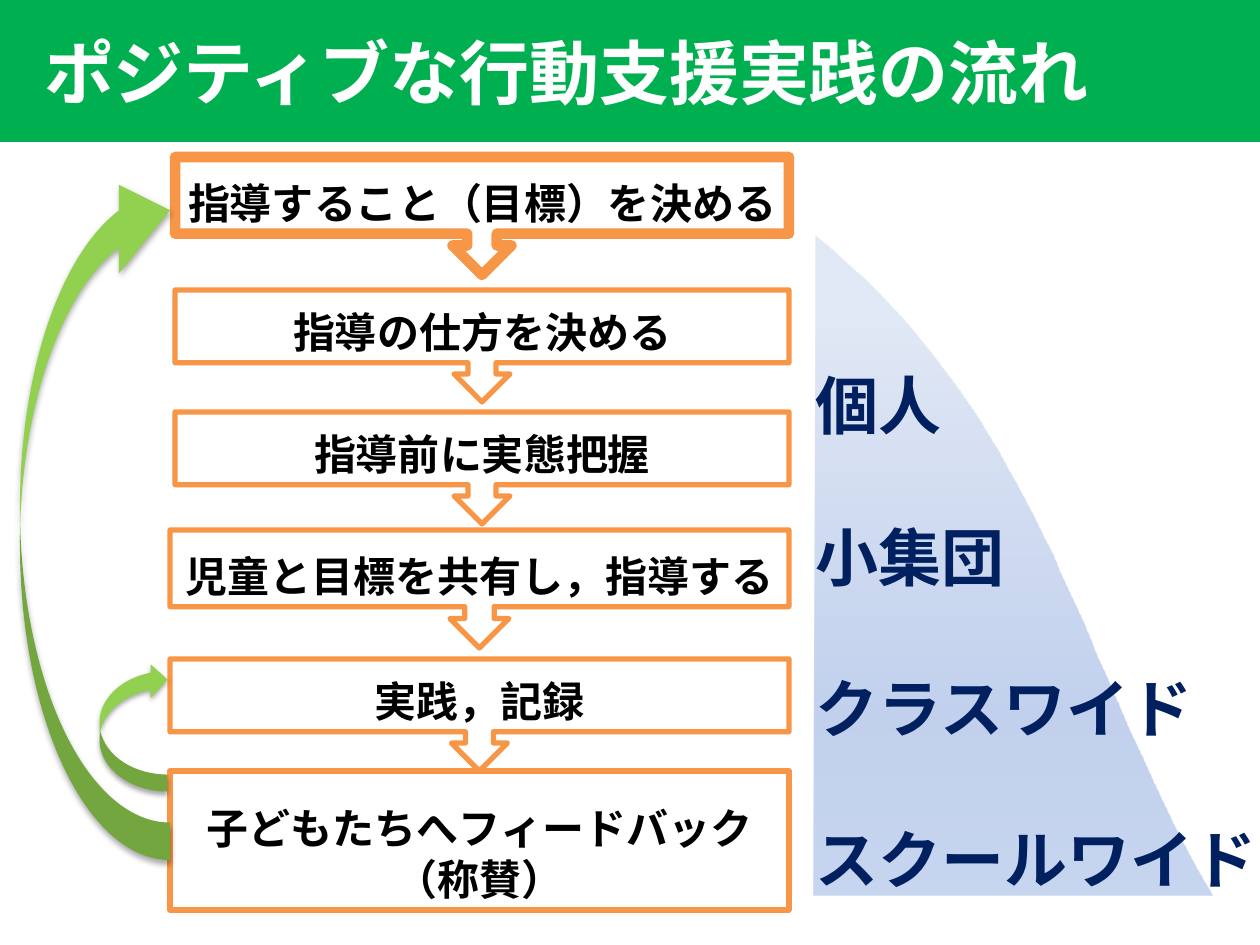
from lxml import etree
from pptx import Presentation
from pptx import util as u
from pptx.dml.color import RGBColor
from pptx.enum import shapes, text
from pptx.oxml import parse_xml
from pptx.oxml.ns import nsdecls, qn

PX = 914400 / 126
FONT = "Noto Sans CJK JP"
HEX = {
    "green": "00B050", "lime": "92D050", "orange": "F79646", "navy": "002060",
    "white": "FFFFFF", "black": "000000",
    "deep": "B2C6EA", "mid": "C2D1ED", "pale": "E1E8F5",
}
CALL = shapes.MSO_SHAPE.DOWN_ARROW_CALLOUT
RECT = shapes.MSO_SHAPE.RECTANGLE
CURVE = shapes.MSO_SHAPE.CURVED_DOWN_ARROW
# preset, left, top, width, height, line width, lines of text
STEPS = [
    (CALL, 175, 157, 614, 118, 6, ["指導すること（目標）を決める"]),
    (CALL, 175, 290, 614, 112, 3, ["指導の仕方を決める"]),
    (CALL, 175, 412, 614, 112, 3, ["指導前に実態把握"]),
    (CALL, 170, 530, 619, 118, 3, ["児童と目標を共有し，指導する"]),
    (CALL, 170, 659, 619, 112, 3, ["実践，記録"]),
    (RECT, 170, 771, 619, 139, 3, ["子どもたちへフィードバック", "（称賛）"]),
]
LEVELS = ["個人", "小集団", "クラスワイド", "スクールワイド"]


def px(n):
    return u.Emu(round(n * PX))


def rgb(name):
    return RGBColor.from_string(HEX[name])


def place(shape, *box):
    shape.left, shape.top, shape.width, shape.height = map(px, box)


def paint(shape, name):
    shape.fill.solid()
    shape.fill.fore_color.rgb = rgb(name)


def write(shape, lines, size, color, align=text.PP_ALIGN.LEFT,
          anchor=text.MSO_ANCHOR.TOP, left=0, space=1):
    frame = shape.text_frame
    frame.word_wrap = True
    frame.auto_size = text.MSO_AUTO_SIZE.NONE
    frame.vertical_anchor = anchor
    frame.margin_left, frame.margin_right = px(left), 0
    for i, line in enumerate(lines):
        para = frame.add_paragraph() if i else frame.paragraphs[0]
        para.alignment, para.line_spacing = align, space
        para.space_before = u.Pt(0)
        run = para.add_run()
        run.text = line
        font = run.font
        font.name, font.size, font.bold = FONT, u.Pt(size), True
        font.color.rgb = rgb(color)
        etree.SubElement(font._element, qn("a:ea"), typeface=FONT)


def add_step(slide, kind, left, top, width, height, line, lines):
    box = slide.shapes.add_shape(kind, *map(px, (left, top, width, height)))
    box.shadow.inherit = False
    paint(box, "white")
    box.line.color.rgb = rgb("orange")
    box.line.width = u.Pt(line)
    write(box, lines, 24, "black", text.PP_ALIGN.CENTER, text.MSO_ANCHOR.BOTTOM)


def add_loop(slide, *box, adjust=()):
    """Add a curved arrow, turned to lead back up to an earlier step."""
    loop = slide.shapes.add_shape(CURVE, *map(px, box))
    loop.rotation = 270
    for i, value in enumerate(adjust):
        loop.adjustments[i] = value
    paint(loop, "lime")
    loop.line.fill.background()
    loop.shadow.inherit = False
    glow = loop._element.spPr.find(qn("a:effectLst"))
    glow.append(parse_xml(
        f'<a:outerShdw {nsdecls("a")} blurRad="{u.Pt(3.1)}" dist="{u.Pt(1.8)}" '
        f'dir="5400000" rotWithShape="0"><a:srgbClr val="{HEX["black"]}">'
        '<a:alpha val="35000"/></a:srgbClr></a:outerShdw>'))


def bezier(ends, t):
    a, b, c, d = ends
    s = 1 - t
    return tuple(s**3 * p + 3 * s * s * t * q + 3 * s * t * t * r + t**3 * v
                 for p, q, r, v in zip(a, b, c, d))


def add_slope(slide):
    """Add the shaded area that widens from one person to the whole school."""
    ends = [(816, 236), (1047, 423), (1081, 675), (1212, 896)]
    pen = slide.shapes.build_freeform(814, 896, scale=PX)
    pen.add_line_segments([bezier(ends, i / 40) for i in range(41)])
    slope = pen.convert_to_shape()
    slope.shadow.inherit = False
    slope.line.fill.background()
    stops = "".join(
        f'<a:gs pos="{pos}000"><a:srgbClr val="{HEX[name]}">'
        f'<a:alpha val="{alpha}000"/></a:srgbClr></a:gs>'
        for pos, name, alpha in
        [(0, "deep", 71), (30, "mid", 100), (88, "pale", 100)])
    props = slope._element.spPr
    props.find(qn("a:custGeom")).addnext(parse_xml(
        f'<a:gradFill {nsdecls("a")} rotWithShape="1"><a:gsLst>{stops}</a:gsLst>'
        '<a:lin ang="16200000" scaled="0"/></a:gradFill>'))


def set_title(slide):
    title = slide.shapes.title
    place(title, 0, 0, 1260, 142)
    paint(title, "green")
    write(title, ["ポジティブな行動支援実践の流れ"], 40, "white",
          anchor=text.MSO_ANCHOR.MIDDLE, left=44)


def set_levels(slide):
    body = slide.placeholders[1]
    place(body, 803, 285, 466, 624)
    write(body, LEVELS, 36, "navy", left=13, space=2)
    for para in body.text_frame.paragraphs:
        props = para._p.get_or_add_pPr()
        props.set("marL", "0")
        props.set("indent", "0")
        etree.SubElement(props, qn("a:buNone"))
    slide.shapes._spTree.append(body._element)  # in front of the slope


def main():
    deck = Presentation()
    deck.slide_width, deck.slide_height = px(1260), px(945)
    slide = deck.slides.add_slide(deck.slide_layouts[1])
    set_title(slide)
    add_slope(slide)
    for step in STEPS:
        add_step(slide, *step)
    add_loop(slide, -252, 438, 694, 150, adjust=(0.25, 0.59, 0.34))
    set_levels(slide)
    add_loop(slide, 69, 693, 129, 68)
    deck.save("out.pptx")


if __name__ == "__main__":
    main()
